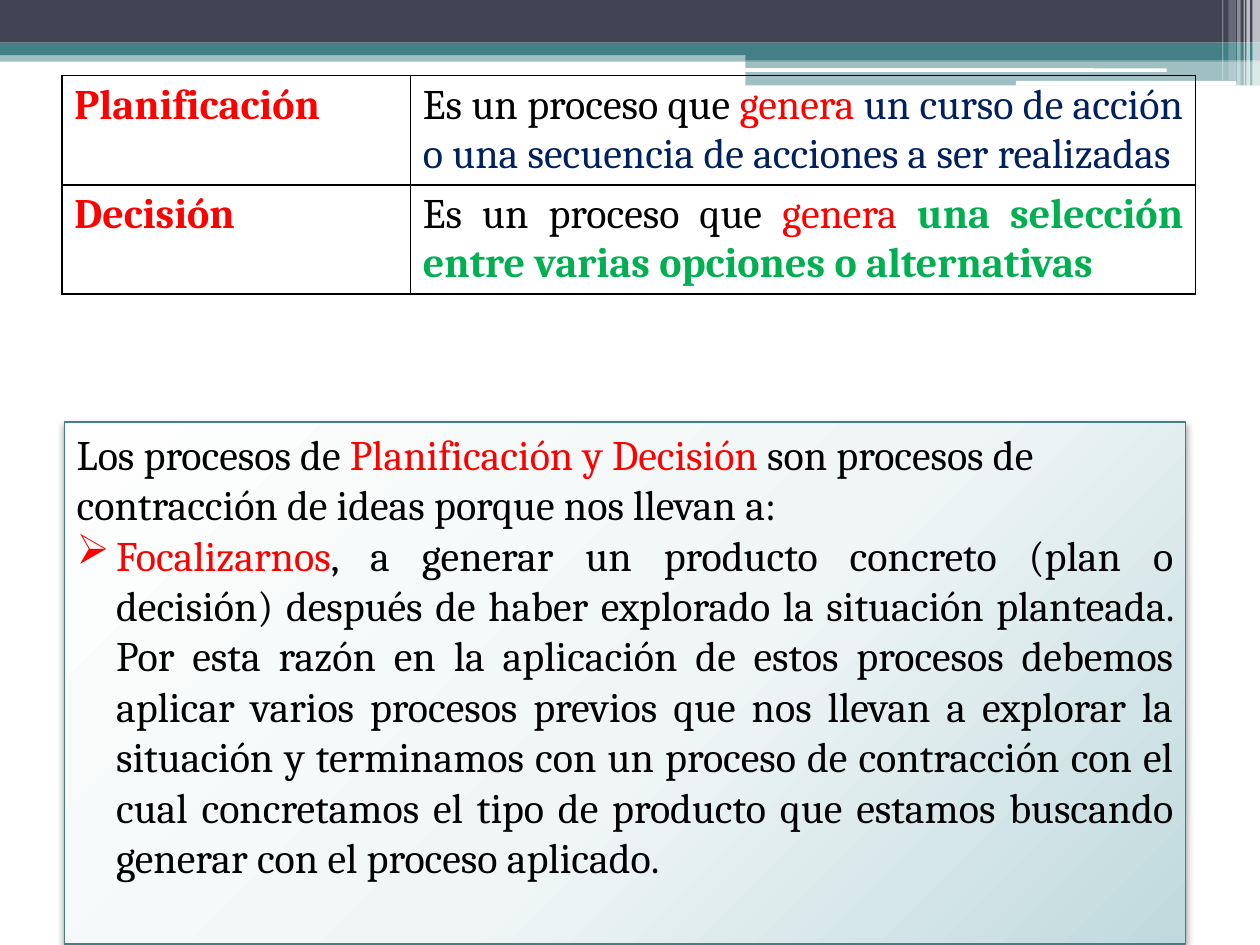
from lxml import etree
from pptx import Presentation
from pptx.dml.color import RGBColor
from pptx.enum.shapes import MSO_SHAPE
from pptx.enum.text import MSO_ANCHOR, PP_ALIGN
from pptx.oxml import parse_xml
from pptx.oxml.ns import nsdecls, qn
from pptx.util import Pt

RECTANGLE, ROUNDED = MSO_SHAPE.RECTANGLE, MSO_SHAPE.ROUNDED_RECTANGLE
LEFT, JUSTIFY, TOP = PP_ALIGN.LEFT, PP_ALIGN.JUSTIFY, MSO_ANCHOR.TOP
BLANK_LAYOUT = 6

THEME = {
    "font": "Cambria", "size": 24,
    "black": "000000", "red": "FF0000", "navy": "002060", "green": "00B050",
    "slate": "424456", "teal": "438086", "white": "FFFFFF",
    "gradient": [(0, "FEFEFE"), (55, "F0F6F6"), (100, "BFD9DD")],
}


def add_block(kind, left, top, width, height, color, opacity=100):
    shape = slide.shapes.add_shape(kind, Pt(left), Pt(top), Pt(width), Pt(height))
    shape.shadow.inherit = False
    shape.line.fill.background()
    shape.fill.solid()
    shape.fill.fore_color.rgb = RGBColor.from_string(THEME[color])
    if opacity < 100:
        color_element = shape._element.spPr.find(qn("a:solidFill"))[0]
        etree.SubElement(color_element, qn("a:alpha"), val=str(opacity * 1000))
    return shape


def write_runs(paragraph, runs, alignment):
    """Fill a paragraph with (text, color name, bold) runs."""
    paragraph.alignment = alignment
    for text, color, bold in runs:
        run = paragraph.add_run()
        run.text = text
        font_format = {"name": THEME["font"], "size": Pt(THEME["size"]), "bold": bold}
        for attribute, value in font_format.items():
            setattr(run.font, attribute, value)
        run.font.color.rgb = RGBColor.from_string(THEME[color])


presentation = Presentation()
presentation.slide_width, presentation.slide_height = Pt(720), Pt(540)
slide = presentation.slides.add_slide(presentation.slide_layouts[BLANK_LAYOUT])

# Header bands: left, top, width, height, color, opacity
bands = [
    (0, 28.8, 720, 6.5, "teal", 50),
    (0, 0, 720, 24.4, "slate", 100),
    (0, 24.4, 720, 7.2, "teal", 100),
    (426, 28.1, 294, 6.5, "teal", 100),
    (426, 34.6, 294, 14.2, "teal", 50),
]
for left, top, width, height, color, opacity in bands:
    add_block(RECTANGLE, left, top, width, height, color, opacity)

for left, top, width, height in [(425.5, 39, 241.2, 2), (580.5, 46.2, 126, 2.7)]:
    add_block(ROUNDED, left, top, width, height, "white").adjustments[0] = 0.167

# Header stripes: left, width, height, opacity
stripes = [
    (715.7, 4.3, 49, 65), (712.2, 2, 49, 65), (710.7, 0.7, 49, 60),
    (707, 2, 49, 40), (702, 4.3, 46, 20), (698.4, 0.7, 46, 30),
]
for left, width, height, opacity in stripes:
    add_block(RECTANGLE, left, 0, width, height, "white", opacity)

# Definitions table
definitions = [
    ("Planificación", [
        ("Es un proceso que ", "black", False),
        ("genera", "red", False),
        (" un curso de acción o una secuencia de acciones a ser realizadas ", "navy", False),
    ]),
    ("Decisión", [
        ("Es un proceso que ", "black", False),
        ("genera ", "red", False),
        ("una selección entre varias opciones o alternativas", "green", True),
    ]),
]
column_widths, row_height = (199.2, 448.8), 62.3
table = slide.shapes.add_table(
    len(definitions), len(column_widths), Pt(35.3), Pt(43.2),
    Pt(sum(column_widths)), Pt(row_height * len(definitions))).table
table.first_row = table.horz_banding = False
for column, width in zip(table.columns, column_widths):
    column.width = Pt(width)
for row, (term, meaning) in zip(table.rows, definitions):
    row.height = Pt(row_height)
    contents = [([(term, "red", True)], LEFT), (meaning, JUSTIFY)]
    for cell, (runs, alignment) in zip(row.cells, contents):
        write_runs(cell.text_frame.paragraphs[0], runs, alignment)
        cell.fill.background()
        for index, side in enumerate(("lnL", "lnR", "lnT", "lnB")):
            border = parse_xml(
                f'<a:{side} {nsdecls("a")} w="{Pt(1)}"><a:solidFill>'
                f'<a:srgbClr val="{THEME["black"]}"/></a:solidFill></a:{side}>')
            cell._tc.get_or_add_tcPr().insert(index, border)

# Explanation box
box = add_block(RECTANGLE, 36.8, 241.2, 640.8, 298.2, "white")
box.line.color.rgb = RGBColor.from_string(THEME["teal"])
box.line.width = Pt(0.75)
properties = box._element.spPr
stops = "".join(f'<a:gs pos="{position * 1000}"><a:srgbClr val="{color}"/></a:gs>'
                for position, color in THEME["gradient"])
properties.replace(properties.find(qn("a:solidFill")), parse_xml(
    f'<a:gradFill {nsdecls("a")} rotWithShape="1"><a:gsLst>{stops}</a:gsLst>'
    '<a:path path="circle"><a:fillToRect l="-40000" t="-90000" r="140000" b="190000"/>'
    '</a:path></a:gradFill>'))
properties.find(qn("a:effectLst")).append(parse_xml(
    f'<a:outerShdw {nsdecls("a")} blurRad="{Pt(4.1)}" dist="{Pt(2)}" dir="5400000" '
    f'rotWithShape="0"><a:srgbClr val="{THEME["black"]}"><a:alpha val="40000"/>'
    '</a:srgbClr></a:outerShdw>'))

text_frame = box.text_frame
for attribute, value in {"word_wrap": True, "vertical_anchor": TOP}.items():
    setattr(text_frame, attribute, value)
write_runs(text_frame.paragraphs[0], [
    ("Los procesos de ", "black", False),
    ("Planificación y Decisión ", "red", False),
    ("son procesos de contracción de ideas porque nos llevan a:", "black", False),
], LEFT)
bullet_paragraph = text_frame.add_paragraph()
write_runs(bullet_paragraph, [
    ("Focalizarnos", "red", False),
    (", a generar un producto concreto (plan o decisión) después de haber explorado "
     "la situación planteada. Por esta razón en la aplicación de estos procesos debemos "
     "aplicar varios procesos previos que nos llevan a explorar la situación y terminamos "
     "con un proceso de contracción con el cual concretamos el tipo de producto que "
     "estamos buscando generar con el proceso aplicado. ", "black", False),
], JUSTIFY)
paragraph_properties = bullet_paragraph._p.get_or_add_pPr()
for attribute, value in {"marL": Pt(22.5), "indent": Pt(-22.5)}.items():
    paragraph_properties.set(attribute, str(value))
etree.SubElement(paragraph_properties, qn("a:buFont"), typeface="Wingdings")
etree.SubElement(paragraph_properties, qn("a:buChar"), char="Ø")

presentation.save("out.pptx")
